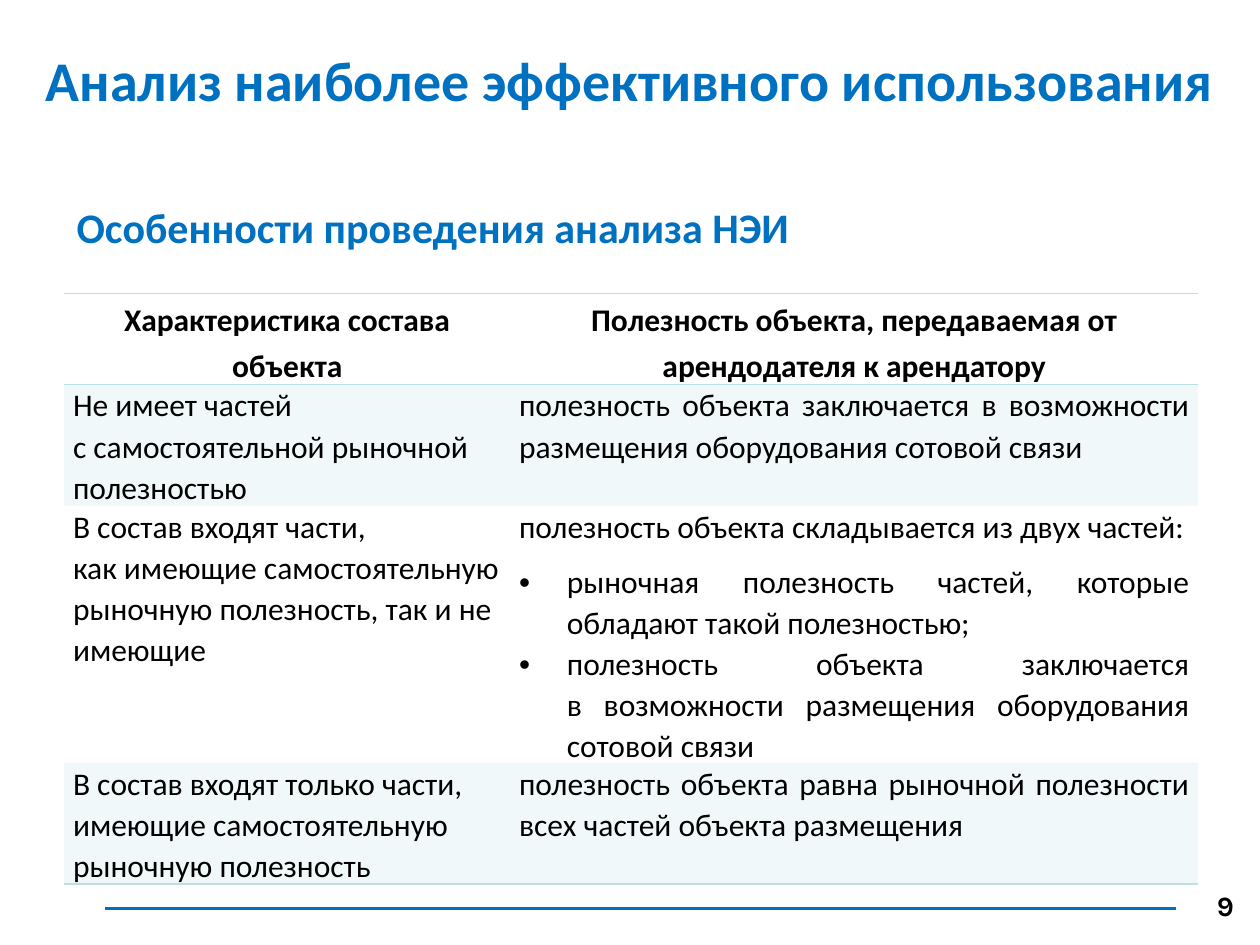
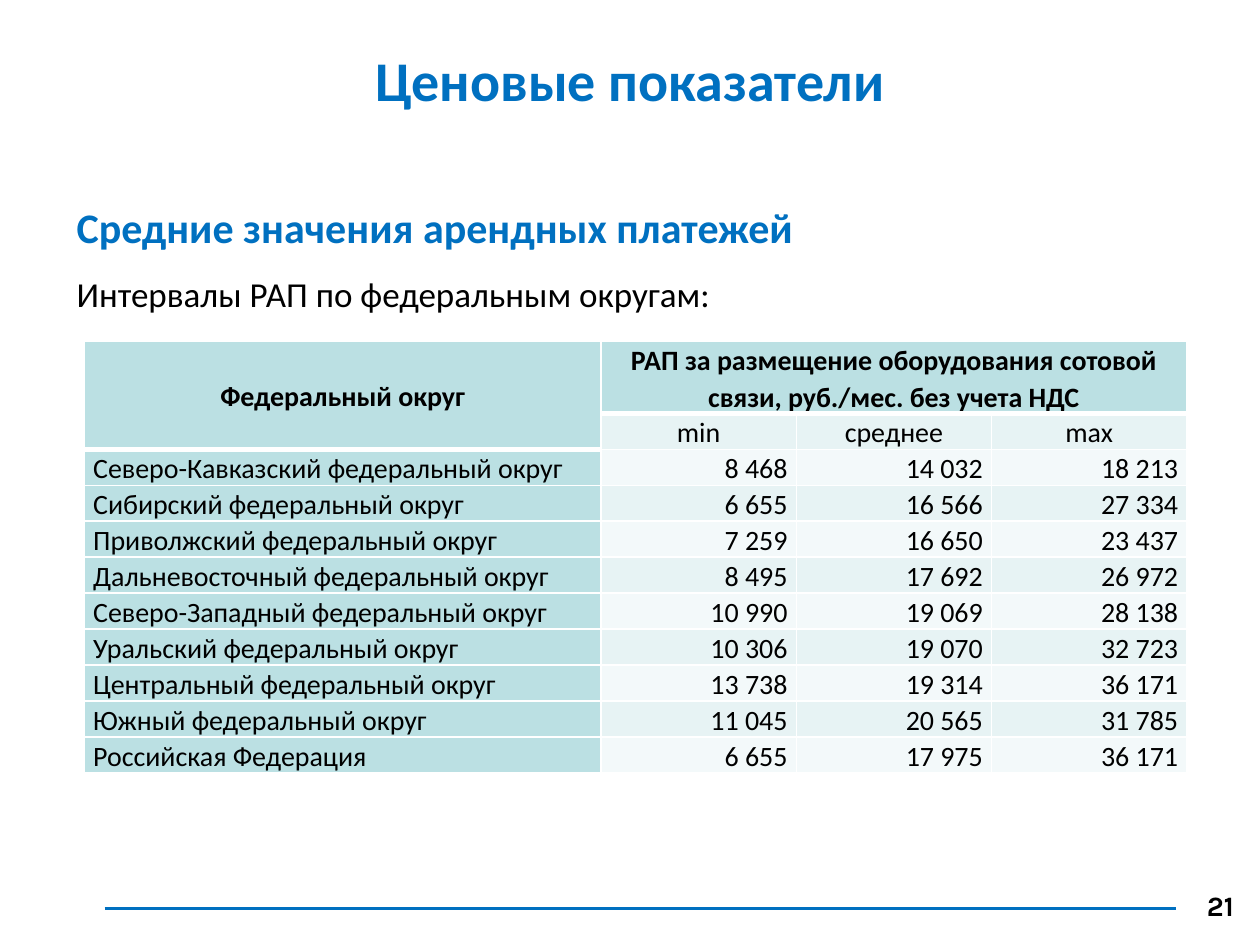
from lxml.etree import SubElement
from pptx import Presentation
from pptx.dml.color import RGBColor
from pptx.enum.shapes import MSO_CONNECTOR
from pptx.enum.text import MSO_ANCHOR, PP_ALIGN
from pptx.oxml.ns import qn
from pptx.util import Inches, Pt

BLUE, TEAL, BLACK, WHITE = "0070C0", "BBE0E3", "000000", "FFFFFF"
BANDS = ("F3F9FA", "E7F3F4")
NO_STYLE = "{2D5ABB26-0587-4C30-8999-92F81FD0307C}"
LEFT, CENTER, RIGHT, JUSTIFY = PP_ALIGN.LEFT, PP_ALIGN.CENTER, PP_ALIGN.RIGHT, PP_ALIGN.JUSTIFY

UTILITY_HEADER = ("Характеристика состава объекта",
                  "Полезность объекта, передаваемая от арендодателя к арендатору")
UTILITY_ROWS = [
    ("Не имеет частей\nс самостоятельной рыночной полезностью",
     ["полезность объекта заключается в возможности размещения оборудования сотовой связи"]),
    ("В состав входят части,\nкак имеющие самостоятельную рыночную полезность, так и не имеющие",
     ["полезность объекта складывается из двух частей:",
      "рыночная полезность частей, которые обладают такой полезностью;",
      "полезность объекта заключается\nв возможности размещения оборудования сотовой связи"]),
    ("В состав входят только части, имеющие самостоятельную рыночную полезность",
     ["полезность объекта равна рыночной полезности всех частей объекта размещения"]),
]
RENT_ROWS = [
    ("Северо-Кавказский федеральный округ", "8 468", "14 032", "18 213"),
    ("Сибирский федеральный округ", "6 655", "16 566", "27 334"),
    ("Приволжский федеральный округ", "7 259", "16 650", "23 437"),
    ("Дальневосточный федеральный округ", "8 495", "17 692", "26 972"),
    ("Северо-Западный федеральный округ", "10 990", "19 069", "28 138"),
    ("Уральский федеральный округ", "10 306", "19 070", "32 723"),
    ("Центральный федеральный округ", "13 738", "19 314", "36 171"),
    ("Южный федеральный округ", "11 045", "20 565", "31 785"),
    ("Российская Федерация", "6 655", "17 975", "36 171"),
]


def rgb(color):
    """Turn a hex string into a colour."""
    return RGBColor.from_string(color)


def add_text(tf, text, size=18, color=BLACK, bold=False, font="Calibri", align=LEFT,
             spacing=None, before=None, after=None, bullet=False):
    """Add one formatted paragraph to a text frame."""
    first = tf.paragraphs[0]
    p = tf.add_paragraph() if first.runs else first
    p.text = text
    p.alignment = align
    if bullet:
        pPr = p._p.get_or_add_pPr()
        pPr.set("marL", str(Inches(0.38)))
        pPr.set("indent", str(-Inches(0.38)))
        SubElement(pPr, qn("a:buFont"), typeface="Arial")
        SubElement(pPr, qn("a:buChar"), char="•")
    if spacing is not None:
        p.line_spacing = spacing
    if before is not None:
        p.space_before = Pt(before)
    if after is not None:
        p.space_after = Pt(after)
    for r in p.runs:
        r.font.name, r.font.size, r.font.bold = font, Pt(size), bold
        r.font.color.rgb = rgb(color)


def add_box(s, left, top, width, height, anchor=MSO_ANCHOR.TOP):
    """Add a wrapping text box and return its text frame."""
    sp = s.shapes.add_textbox(Inches(left), Inches(top), Inches(width), Inches(height))
    tf = sp.text_frame
    tf.word_wrap, tf.vertical_anchor = True, anchor
    return tf


def add_slide(prs, title, subtitle, number):
    """Add a slide with footer, title and subtitle; return it with its body frame."""
    s = prs.slides.add_slide(prs.slide_layouts[6])
    add_text(add_box(s, 7.27, 7, 2.62, 0.37), number, size=16, bold=True, font="Karla", align=RIGHT)
    line = s.shapes.add_connector(MSO_CONNECTOR.STRAIGHT, Inches(0.83), Inches(7.21),
                                  Inches(9.33), Inches(7.21))
    line.line.color.rgb, line.line.width = rgb(BLUE), Pt(1.5)
    SubElement(line._element.spPr, qn("a:effectLst"))
    add_text(add_box(s, 0, 0, 10, 1.25, MSO_ANCHOR.MIDDLE), title,
             size=32, color=BLUE, bold=True, align=CENTER)
    body = add_box(s, 0.51, 1.55, 9.16, 1.01)
    add_text(body, subtitle, size=24, color=BLUE, bold=True, align=JUSTIFY)
    return s, body


def add_grid(s, left, top, widths, heights):
    """Add an unstyled table with the given column widths and row heights."""
    frame = s.shapes.add_table(len(heights), len(widths), Inches(left), Inches(top),
                               Inches(sum(widths)), Inches(sum(heights)))
    table = frame.table
    table.first_row = table.horz_banding = False
    table._tbl.tblPr.find(qn("a:tableStyleId")).text = NO_STYLE
    for column, width in zip(table.columns, widths):
        column.width = Inches(width)
    for row, height in zip(table.rows, heights):
        row.height = Inches(height)
    return table


def style_cell(cell, fill=None, alpha=None, anchor=MSO_ANCHOR.TOP, color=TEAL, **borders):
    """Set margins, fill and borders (L, R, T, B widths in points) of a cell."""
    cell.margin_left = cell.margin_right = Inches(0.07)
    cell.margin_top = cell.margin_bottom = 0
    cell.vertical_anchor = anchor
    tcPr = cell._tc.get_or_add_tcPr()
    for side in "LRTB":
        if side in borders:
            ln = SubElement(tcPr, qn(f"a:ln{side}"), w=str(Pt(borders[side])))
            SubElement(SubElement(ln, qn("a:solidFill")), qn("a:srgbClr"), val=color)
    if fill is None:
        cell.fill.background()
        return
    cell.fill.solid()
    cell.fill.fore_color.rgb = rgb(fill)
    if alpha:
        clr = tcPr.find(qn("a:solidFill")).find(qn("a:srgbClr"))
        SubElement(clr, qn("a:alpha"), val=str(alpha * 1000))


def add_utility_table(s):
    """Add the table of object composition and utility."""
    table = add_grid(s, 0.51, 2.33, (3.54, 5.46), (0.72, 0.96, 2.04, 0.96))
    for c, text in enumerate(UTILITY_HEADER):
        style_cell(table.cell(0, c), T=1, B=1)
        add_text(table.cell(0, c).text_frame, text, bold=True, align=CENTER, spacing=1.2, after=6)
    for r, (kind, utility) in enumerate(UTILITY_ROWS, 1):
        band = {"fill": TEAL, "alpha": 20} if r % 2 else {}
        edge = {"B": 1} if r == len(UTILITY_ROWS) else {}
        for c in range(2):
            style_cell(table.cell(r, c), **band, **edge)
        add_text(table.cell(r, 0).text_frame, kind, spacing=1.07, after=8)
        for i, text in enumerate(utility):
            add_text(table.cell(r, 1).text_frame, text, align=JUSTIFY, spacing=1.07,
                     after=0 if 0 < i < len(utility) - 1 else 8, bullet=i > 0)


def add_rent_table(s):
    """Add the table of rent ranges by federal district."""
    rows = [("Федеральный округ",
             "РАП за размещение оборудования сотовой связи, руб./мес. без учета НДС", "", ""),
            ("", "min", "среднее", "max")] + RENT_ROWS
    table = add_grid(s, 0.67, 2.71, (4.1, 1.55, 1.55, 1.55), [0.56] + [0.28] * (len(rows) - 1))
    table.cell(0, 0).merge(table.cell(1, 0))
    table.cell(0, 1).merge(table.cell(0, 3))
    for r, row in enumerate(rows):
        for c, text in enumerate(row):
            cell, head = table.cell(r, c), r < 2
            thick = r == 0 or (r == 1 and c == 0)
            top = {"T": 1} if r == 0 else {}
            style_cell(cell, TEAL if r == 0 or c == 0 else BANDS[r % 2], color=WHITE,
                       anchor=MSO_ANCHOR.MIDDLE if head else MSO_ANCHOR.TOP,
                       L=1, R=1, B=3 if thick else 1, **top)
            if text:
                align = CENTER if head else RIGHT if c else LEFT
                add_text(cell.text_frame, text, size=16, bold=r == 0, align=align,
                         spacing=1.07, after=8)


def main():
    """Build both slides and save the file."""
    prs = Presentation()
    prs.slide_width, prs.slide_height = Inches(10), Inches(7.5)
    s, body = add_slide(prs, "Анализ наиболее эффективного использования",
                        "Особенности проведения анализа НЭИ", "9")
    add_utility_table(s)
    s, body = add_slide(prs, "Ценовые показатели", "Средние значения арендных платежей", "21")
    add_text(body, "Интервалы РАП по федеральным округам:", size=20, align=JUSTIFY, before=12)
    add_rent_table(s)
    prs.save("out.pptx")


if __name__ == "__main__":
    main()
